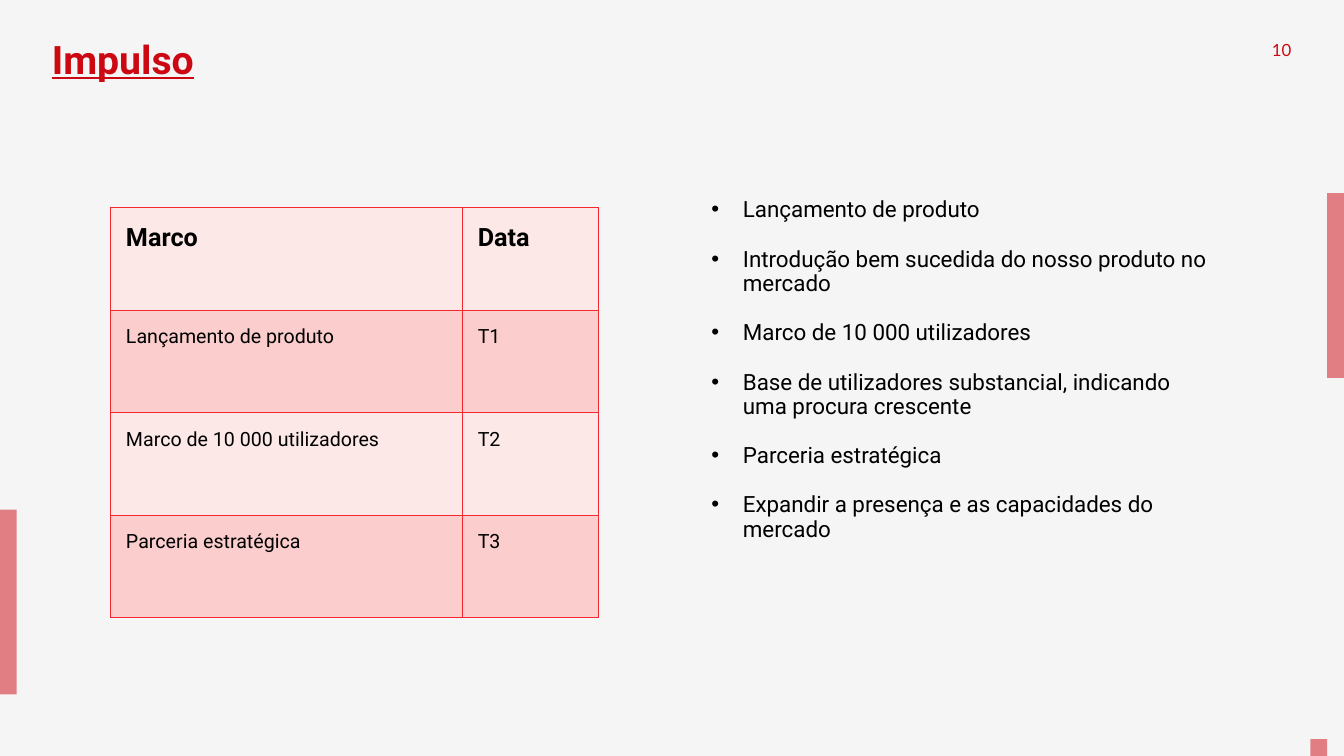
from lxml import etree
from pptx import Presentation
from pptx.dml.color import RGBColor
from pptx.enum.shapes import MSO_SHAPE
from pptx.enum.text import PP_ALIGN
from pptx.oxml.ns import qn
from pptx.util import Pt

RECTANGLE = MSO_SHAPE.RECTANGLE
RIGHT = PP_ALIGN.RIGHT

WIDTH, HEIGHT = 960, 540
RED, BLACK, BACKGROUND = "CC0912", "000000", "F5F5F5"
BORDER, BAND_LIGHT, BAND_DARK = "F52730", "FDE8E8", "FBCDCD"

MILESTONES = [
    ("Marco", "Data"),
    ("Lançamento de produto", "T1"),
    ("Marco de 10 000 utilizadores", "T2"),
    ("Parceria estratégica", "T3"),
]
POINTS = [
    "Lançamento de produto",
    "Introdução bem sucedida do nosso produto no mercado",
    "Marco de 10 000 utilizadores",
    "Base de utilizadores substancial, indicando uma procura crescente",
    "Parceria estratégica",
    "Expandir a presença e as capacidades do mercado",
]


def color(value):
    """Turn a hex string into a colour."""
    return RGBColor.from_string(value)


def style_font(para, size, name, value, bold=False):
    """Set the font of a whole paragraph."""
    font = para.font
    font.size, font.name, font.bold = Pt(size), name, bold
    font.color.rgb = color(value)


def add_text_frame(page, left, top, width, height):
    """Add a wrapping text box and return its text frame."""
    box = page.shapes.add_textbox(Pt(left), Pt(top), Pt(width), Pt(height))
    box.text_frame.word_wrap = True
    return box.text_frame


def add_accent(page, left, top, width, height):
    """Add a half-transparent red bar."""
    bar = page.shapes.add_shape(RECTANGLE, Pt(left), Pt(top), Pt(width), Pt(height))
    bar.shadow.inherit = False
    bar.line.fill.background()
    bar.fill.solid()
    bar.fill.fore_color.rgb = color(RED)
    shade = bar.fill._xPr.find(".//" + qn("a:srgbClr"))
    etree.SubElement(shade, qn("a:alpha"), val="50000")


def add_title(page, left, top, width, height):
    """Add the underlined slide title."""
    para = add_text_frame(page, left, top, width, height).paragraphs[0]
    para.text = "Impulso"
    para.line_spacing = 0.9
    style_font(para, 28, "Roboto", RED, bold=True)
    para.font.underline = True


def add_page_number(page, left, top, width, height):
    """Add the right-aligned page number."""
    frame = add_text_frame(page, left, top, width, height)
    frame.margin_bottom = 0
    para = frame.paragraphs[0]
    para.text = "10"
    para.alignment = RIGHT
    style_font(para, 12, "Lato", RED)


def add_borders(cell):
    """Draw a one-point line on every side of a cell."""
    properties = cell._tc.get_or_add_tcPr()
    for index, side in enumerate(("a:lnL", "a:lnR", "a:lnT", "a:lnB")):
        line = etree.Element(qn(side), w=str(Pt(1)))
        fill = etree.SubElement(line, qn("a:solidFill"))
        etree.SubElement(fill, qn("a:srgbClr"), val=BORDER)
        properties.insert(index, line)


def add_milestones(page, left, top, width, height):
    """Add the banded table of milestones and dates."""
    frame = page.shapes.add_table(
        len(MILESTONES), 2, Pt(left), Pt(top), Pt(width), Pt(height))
    table = frame.table
    date_width = 97.2
    table.columns[0].width = Pt(width - date_width)
    table.columns[1].width = Pt(date_width)
    for row, texts in enumerate(MILESTONES):
        for column, text in enumerate(texts):
            cell = table.cell(row, column)
            cell.margin_left = cell.margin_right = Pt(10.8)
            cell.margin_top = cell.margin_bottom = Pt(10.8)
            cell.fill.solid()
            cell.fill.fore_color.rgb = color(BAND_DARK if row % 2 else BAND_LIGHT)
            add_borders(cell)
            cell.text = text
            header = row == 0
            style_font(cell.text_frame.paragraphs[0], 18 if header else 14,
                       "Roboto", BLACK, bold=header)


def add_points(page, left, top, width, height):
    """Add the bulleted list."""
    frame = add_text_frame(page, left, top, width, height)
    for index, text in enumerate(POINTS):
        para = frame.add_paragraph() if index else frame.paragraphs[0]
        para.text = text
        para.line_spacing = 0.9
        para.space_after = Pt(18)
        style_font(para, 16, "Roboto", BLACK)
        properties = para._p.get_or_add_pPr()
        properties.set("marL", str(Pt(22.5)))
        properties.set("indent", str(Pt(-22.5)))
        bullet_font = etree.Element(qn("a:buFont"), typeface="Arial")
        bullet = etree.Element(qn("a:buChar"), char="•")
        properties.find(qn("a:defRPr")).addprevious(bullet_font)
        bullet_font.addnext(bullet)


def main():
    """Build the slide and save it."""
    deck = Presentation()
    deck.slide_width, deck.slide_height = Pt(WIDTH), Pt(HEIGHT)
    page = deck.slides.add_slide(deck.slide_layouts[6])
    page.background.fill.solid()
    page.background.fill.fore_color.rgb = color(BACKGROUND)
    add_accent(page, WIDTH - 12, 138, 12, 132)
    add_accent(page, 0, 364, 12, 132)
    add_accent(page, WIDTH - 24, HEIGHT - 12, 12, 12)
    add_title(page, 30, 25.2, 394.6, 87.8)
    add_page_number(page, 892.8, 25.2, 36.7, 28.8)
    add_milestones(page, 79.2, 148.3, 348.5, 293)
    add_points(page, 501.1, 138.2, 371.5, 378)
    deck.save("out.pptx")


if __name__ == "__main__":
    main()
